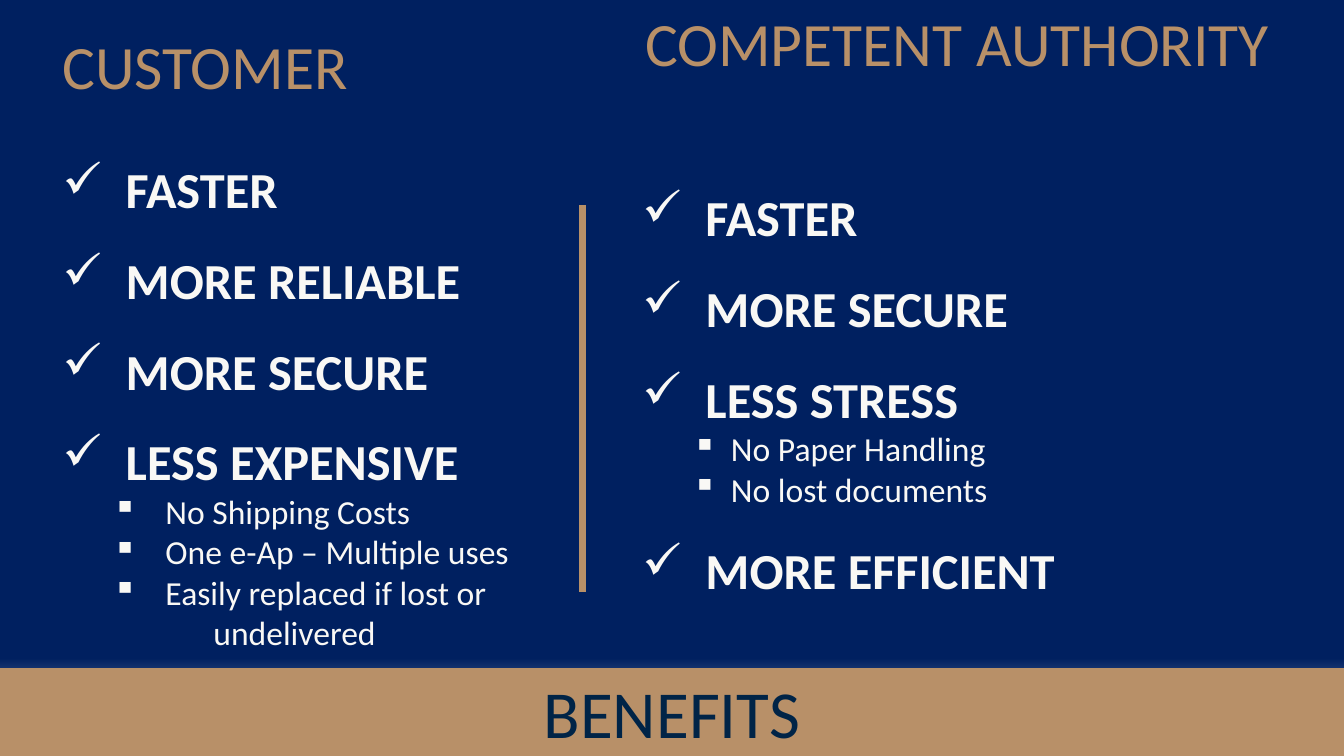
from lxml.etree import SubElement
from pptx import Presentation
from pptx.dml.color import RGBColor
from pptx.enum.shapes import MSO_CONNECTOR as Connector, MSO_SHAPE as Shape
from pptx.enum.text import MSO_ANCHOR as Anchor, PP_ALIGN as Align
from pptx.oxml.ns import qn
from pptx.util import Cm, Pt

NAVY = RGBColor(0x00, 0x20, 0x60)
PALE_BLUE = RGBColor(0xC7, 0xD5, 0xED)
INK = RGBColor(0x00, 0x24, 0x47)
GOLD = RGBColor(0xB8, 0x90, 0x68)
IVORY = RGBColor(0xF9, 0xF8, 0xF5)

CUSTOMER = [
    ("FASTER", []),
    ("MORE RELIABLE", []),
    ("MORE SECURE", []),
    ("LESS EXPENSIVE", ["No Shipping Costs", "One e-Ap – Multiple uses",
                        "Easily replaced if lost or\v\tundelivered"]),
]
AUTHORITY = [
    ("FASTER", []),
    ("MORE SECURE", []),
    ("LESS STRESS", ["No Paper Handling", "No lost documents"]),
    ("MORE EFFICIENT", []),
]


class BenefitsPage:
    font_name = "Calibri"

    def __init__(self, deck):
        self.page = deck.slides.add_slide(deck.slide_layouts[6])

    def background(self):
        fill = self.page.background.fill
        fill.gradient()
        fill.gradient_angle = 270
        for stop, color, position in zip(fill.gradient_stops, (NAVY, PALE_BLUE), (0.87, 1)):
            stop.color.rgb = color
            stop.position = position

    def style(self, para, size, color, bold=False):
        font = para.font
        font.name, font.size, font.bold = self.font_name, Pt(size), bold
        font.color.rgb = color

    def text_box(self, left, top, width, height):
        box = self.page.shapes.add_textbox(Cm(left), Cm(top), Cm(width), Cm(height))
        box.text_frame.word_wrap = True
        return box.text_frame

    def heading(self, text, left, top, width, height, align):
        para = self.text_box(left, top, width, height).paragraphs[0]
        para.text, para.alignment = text, align
        self.style(para, 44, GOLD)

    def bullet(self, para, mark, indent, hanging):
        props = para._p.get_or_add_pPr()
        props.set("marL", str(Cm(indent)))
        props.set("indent", str(-Cm(hanging)))
        SubElement(props, qn("a:buChar")).set("char", mark)

    def checklist(self, items, left, top, width, height, detail_indent, detail_hanging):
        frame = self.text_box(left, top, width, height)
        para = frame.paragraphs[0]
        for number, (benefit, details) in enumerate(items):
            if number:
                para = frame.add_paragraph()
            para.text, para.line_spacing = benefit, 1.5
            self.bullet(para, "✓", 1.6, 1.6)
            self.style(para, 36, IVORY, bold=True)
            for detail in details:
                para = frame.add_paragraph()
                para.text, para.level = detail, 1
                self.bullet(para, "▪", detail_indent, detail_hanging)
                self.style(para, 24, IVORY)

    def divider(self, x, top, bottom):
        line = self.page.shapes.add_connector(Connector.STRAIGHT, Cm(x), Cm(top), Cm(x), Cm(bottom))
        line.line.color.rgb, line.line.width = GOLD, Pt(4.5)
        SubElement(line._element.spPr, qn("a:effectLst"))

    def band(self, text, top, width, height):
        band = self.page.shapes.add_shape(Shape.RECTANGLE, 0, Cm(top), Cm(width), Cm(height))
        band.shadow.inherit = False
        band.fill.solid()
        band.fill.fore_color.rgb = band.line.color.rgb = GOLD
        band.line.width = Pt(1)
        band.text_frame.vertical_anchor = Anchor.MIDDLE
        para = band.text_frame.paragraphs[0]
        para.text, para.alignment = text, Align.CENTER
        self.style(para, 48, INK)


def main():
    deck = Presentation()
    deck.slide_width, deck.slide_height = Cm(33.87), Cm(19.05)
    benefits = BenefitsPage(deck)
    benefits.background()
    benefits.band("BENEFITS", 16.84, 33.87, 2.21)

    # Customer column
    benefits.checklist(CUSTOMER, 1.32, 3.1, 12.75, 14.35, 2.6, 1.33)
    benefits.heading("CUSTOMER", 1.32, 0.58, 10.2, 2.13, Align.JUSTIFY)

    # Competent authority column
    benefits.checklist(AUTHORITY, 15.93, 3.81, 16.08, 12.07, 2.24, 0.97)
    benefits.divider(14.68, 5.16, 14.91)
    benefits.heading("COMPETENT AUTHORITY", 14.68, 0, 18.9, 4.01, Align.CENTER)

    deck.save("out.pptx")


if __name__ == "__main__":
    main()
